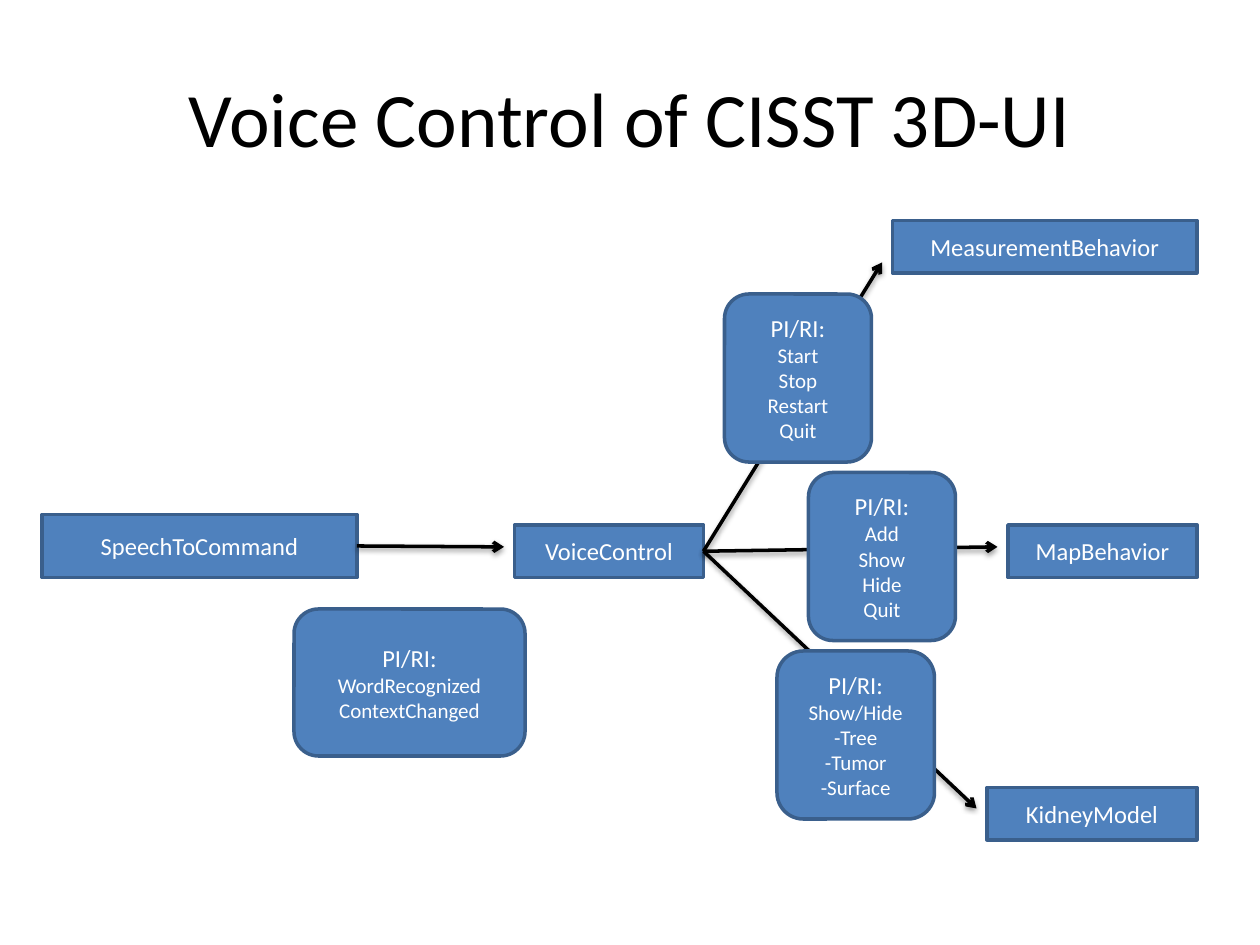
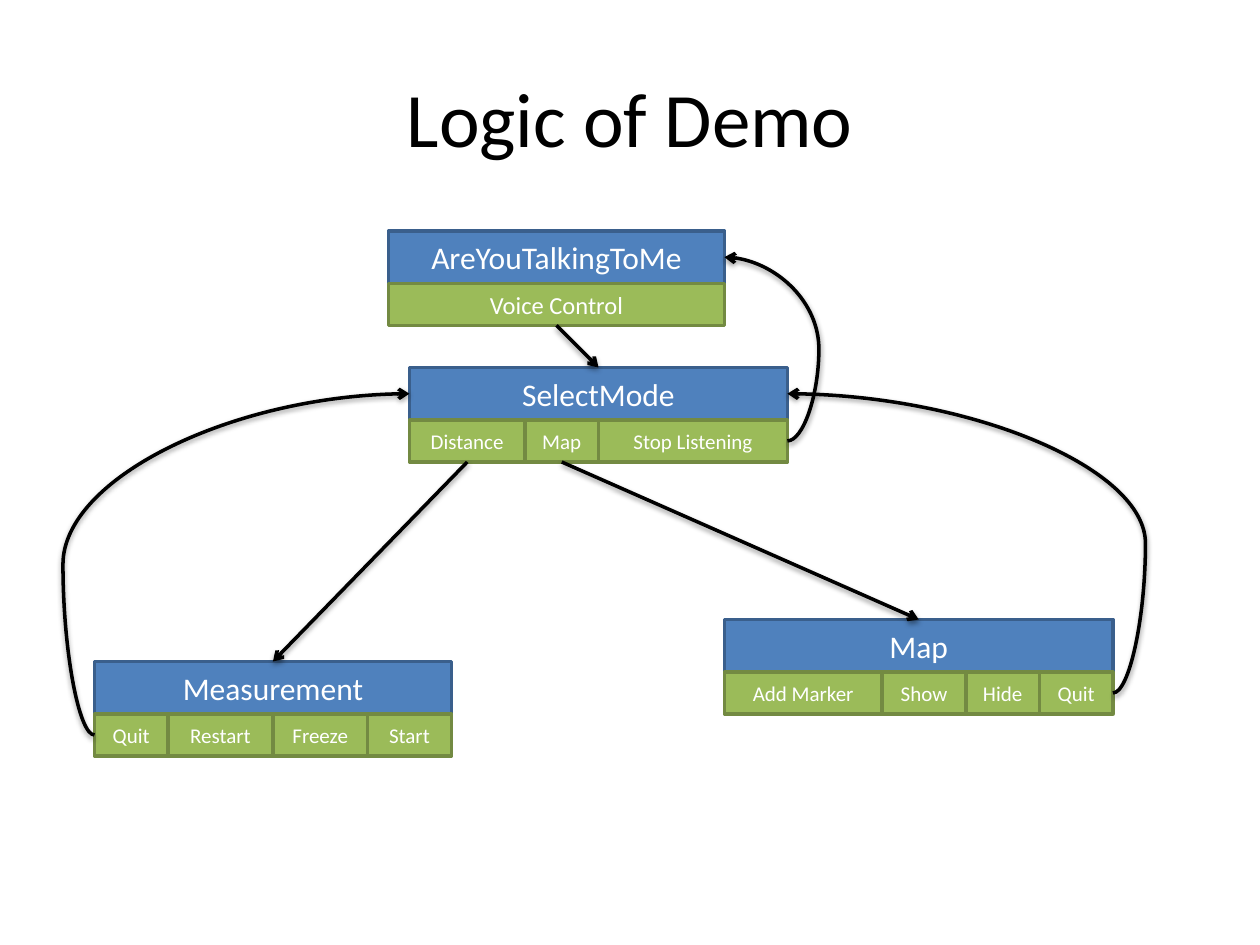
"""Builds two diagram slides about a voice controlled 3D interface."""
from dataclasses import dataclass

from lxml import etree
from pptx import Presentation
from pptx.dml.color import RGBColor
from pptx.enum.shapes import MSO_CONNECTOR, MSO_SHAPE
from pptx.enum.text import MSO_ANCHOR, PP_ALIGN
from pptx.oxml.ns import qn
from pptx.presentation import Presentation as Deck
from pptx.shapes.autoshape import Shape
from pptx.shapes.connector import Connector
from pptx.slide import Slide
from pptx.text.text import TextFrame
from pptx.util import Pt

RECTANGLE = MSO_SHAPE.RECTANGLE
ROUNDED = MSO_SHAPE.ROUNDED_RECTANGLE
STRAIGHT = MSO_CONNECTOR.STRAIGHT
CURVE = MSO_CONNECTOR.CURVE
CENTER = PP_ALIGN.CENTER
MIDDLE = MSO_ANCHOR.MIDDLE
TOP, LEFT, BOTTOM, RIGHT = range(4)

BLACK = RGBColor(0x00, 0x00, 0x00)
WHITE = RGBColor(0xFF, 0xFF, 0xFF)
BLUE = RGBColor(0x4F, 0x81, 0xBD)
DARK_BLUE = RGBColor(0x3A, 0x5F, 0x8C)
GREEN = RGBColor(0x9B, 0xBB, 0x59)
DARK_GREEN = RGBColor(0x73, 0x8A, 0x42)

FONT_NAME = "Calibri"
LINE_WIDTH = 2
TITLE_ONLY_LAYOUT = 5
TITLE_FRAME = {"left": Pt(36), "top": Pt(21.6), "width": Pt(648), "height": Pt(90)}
HEADER_HEIGHT = 30
COMMAND_HEIGHT = 24
SHADOW = {"blurRad": Pt(3.1), "dist": Pt(1.6), "dir": 90 * 60000, "rotWithShape": 0}
SHADOW_ALPHA = 38000


@dataclass
class Box:
    """A filled shape with centred lines of text; sizes are in points."""

    lines: list[str]
    left: float
    top: float
    width: float
    height: float
    sizes: tuple[int, ...] = (14, 12)
    kind: MSO_SHAPE = RECTANGLE
    fill: RGBColor = BLUE
    border: RGBColor = DARK_BLUE


@dataclass
class Mode:
    """A state of the demo with the row of commands it listens for."""

    name: str
    left: float
    top: float
    commands: dict[str, float]
    command_size: int = 12


@dataclass
class Transition:
    """A command that leads from one mode to another."""

    mode: str
    command: str
    start_side: int
    target: str
    end_side: int
    bend: float | None = None


COMPONENTS = [
    Box(["SpeechToCommand"], 24, 294, 180, 36),
    Box(["VoiceControl"], 294, 300, 108, 30),
    Box(["MeasurementBehavior"], 510, 126, 174, 30),
    Box(["MapBehavior"], 576, 300, 108, 30),
    Box(["KidneyModel"], 564, 450, 120, 30),
]
MESSAGES = [
    ("VoiceControl", 504, 150),
    ("VoiceControl", 570, 312.5),
    ("VoiceControl", 558, 462),
    ("SpeechToCommand", 288, 312.5),
]
INTERFACES = [
    Box(["PI/RI:", "Start", "Stop", "Restart", "Quit"], 414, 168, 84, 96, kind=ROUNDED),
    Box(["PI/RI:", "Add", "Show", "Hide", "Quit"], 462, 270, 84, 96, kind=ROUNDED),
    Box(["PI/RI:", "Show/Hide", "-Tree", "-Tumor", "-Surface"], 444, 372, 90, 96, kind=ROUNDED),
    Box(["PI/RI:", "WordRecognized", "ContextChanged"], 168, 348, 132, 84, kind=ROUNDED),
]

MODES = [
    Mode("AreYouTalkingToMe", 222, 132, {"Voice Control": 192}, 14),
    Mode("SelectMode", 234, 210, {"Distance": 66, "Map": 42, "Stop Listening": 108}),
    Mode("Measurement", 54, 378, {"Quit": 42, "Restart": 60, "Freeze": 54, "Start": 48}),
    Mode("Map", 414, 354, {"Add Marker": 90, "Show": 48, "Hide": 42, "Quit": 42}),
]
TRANSITIONS = [
    Transition("AreYouTalkingToMe", "Voice Control", BOTTOM, "SelectMode", TOP),
    Transition("SelectMode", "Distance", BOTTOM, "Measurement", TOP),
    Transition("SelectMode", "Map", BOTTOM, "Map", TOP),
    Transition("Measurement", "Quit", LEFT, "SelectMode", LEFT, -0.1),
    Transition("Map", "Quit", RIGHT, "SelectMode", RIGHT, -0.1),
    Transition("SelectMode", "Stop Listening", RIGHT, "AreYouTalkingToMe", RIGHT, -0.5),
]


def write_lines(frame: TextFrame, lines: list[str], sizes: tuple[int, ...], color: RGBColor) -> None:
    """Write centred paragraphs; the last size serves all remaining lines."""
    frame.word_wrap = True
    frame.vertical_anchor = MIDDLE
    for index, line in enumerate(lines):
        paragraph = frame.paragraphs[0] if index == 0 else frame.add_paragraph()
        paragraph.text = line
        paragraph.alignment = CENTER
        size = sizes[min(index, len(sizes) - 1)]
        for name, value in {"name": FONT_NAME, "size": Pt(size)}.items():
            setattr(paragraph.font, name, value)
        paragraph.font.color.rgb = color


def add_titled_slide(presentation: Deck, title: str) -> Slide:
    """Add a slide with the shared title style."""
    slide = presentation.slides.add_slide(presentation.slide_layouts[TITLE_ONLY_LAYOUT])
    for name, value in TITLE_FRAME.items():
        setattr(slide.shapes.title, name, value)
    write_lines(slide.shapes.title.text_frame, [title], (44,), BLACK)
    return slide


def add_box(slide: Slide, box: Box) -> Shape:
    """Draw a box with its text."""
    shape = slide.shapes.add_shape(
        box.kind, Pt(box.left), Pt(box.top), Pt(box.width), Pt(box.height)
    )
    shape.shadow.inherit = False
    shape.fill.solid()
    shape.fill.fore_color.rgb = box.fill
    shape.line.color.rgb = box.border
    shape.line.width = Pt(LINE_WIDTH)
    write_lines(shape.text_frame, box.lines, box.sizes, WHITE)
    return shape


def add_arrow(slide: Slide, start: Shape, side: int, kind: MSO_CONNECTOR = STRAIGHT,
              end_x: float = 0, end_y: float = 0) -> Connector:
    """Draw a shadowed arrow from the middle of a side to a point."""
    arrow = slide.shapes.add_connector(kind, 0, 0, Pt(end_x), Pt(end_y))
    arrow.begin_connect(start, side)
    arrow.line.color.rgb = BLACK
    arrow.line.width = Pt(LINE_WIDTH)
    properties = arrow.element.spPr
    etree.SubElement(properties.find(qn("a:ln")), qn("a:tailEnd"), type="arrow")
    effects = etree.SubElement(properties, qn("a:effectLst"))
    shadow = etree.SubElement(effects, qn("a:outerShdw"))
    for name, value in SHADOW.items():
        shadow.set(name, str(value))
    color = etree.SubElement(shadow, qn("a:srgbClr"), val=str(BLACK))
    etree.SubElement(color, qn("a:alpha"), val=str(SHADOW_ALPHA))
    return arrow


def add_mode(slide: Slide, mode: Mode) -> dict[str, Shape]:
    """Draw a mode header above its commands and return the shapes by name."""
    width = sum(mode.commands.values())
    header = Box([mode.name], mode.left, mode.top, width, HEADER_HEIGHT, (18,))
    shapes = {"header": add_box(slide, header)}
    left = mode.left
    for command, command_width in mode.commands.items():
        shapes[command] = add_box(slide, Box(
            [command], left, mode.top + HEADER_HEIGHT, command_width, COMMAND_HEIGHT,
            (mode.command_size,), fill=GREEN, border=DARK_GREEN,
        ))
        left += command_width
    return shapes


def add_transition(slide: Slide, modes: dict[str, dict[str, Shape]], transition: Transition) -> None:
    """Join a command to its target mode, curved when a bend is given."""
    kind = STRAIGHT if transition.bend is None else CURVE
    command = modes[transition.mode][transition.command]
    arrow = add_arrow(slide, command, transition.start_side, kind)
    arrow.end_connect(modes[transition.target]["header"], transition.end_side)
    if transition.bend is not None:
        adjustments = arrow.element.spPr.find(qn("a:prstGeom")).find(qn("a:avLst"))
        formula = f"val {round(transition.bend * 100000)}"
        etree.SubElement(adjustments, qn("a:gd"), name="adj1", fmla=formula)


def build_voice_control(presentation: Deck) -> None:
    """Build the slide with components and their interfaces."""
    slide = add_titled_slide(presentation, "Voice Control of CISST 3D-UI")
    components = {box.lines[0]: add_box(slide, box) for box in COMPONENTS}
    for sender, end_x, end_y in MESSAGES:
        add_arrow(slide, components[sender], RIGHT, end_x=end_x, end_y=end_y)
    for interface in INTERFACES:
        add_box(slide, interface)


def build_demo_logic(presentation: Deck) -> None:
    """Build the slide with the modes of the demo."""
    slide = add_titled_slide(presentation, "Logic of Demo")
    modes = {mode.name: add_mode(slide, mode) for mode in MODES}
    for transition in TRANSITIONS:
        add_transition(slide, modes, transition)


def main() -> None:
    """Build and save the presentation."""
    presentation = Presentation()
    presentation.slide_width = Pt(720)
    presentation.slide_height = Pt(540)
    build_voice_control(presentation)
    build_demo_logic(presentation)
    presentation.save("out.pptx")


if __name__ == "__main__":
    main()
